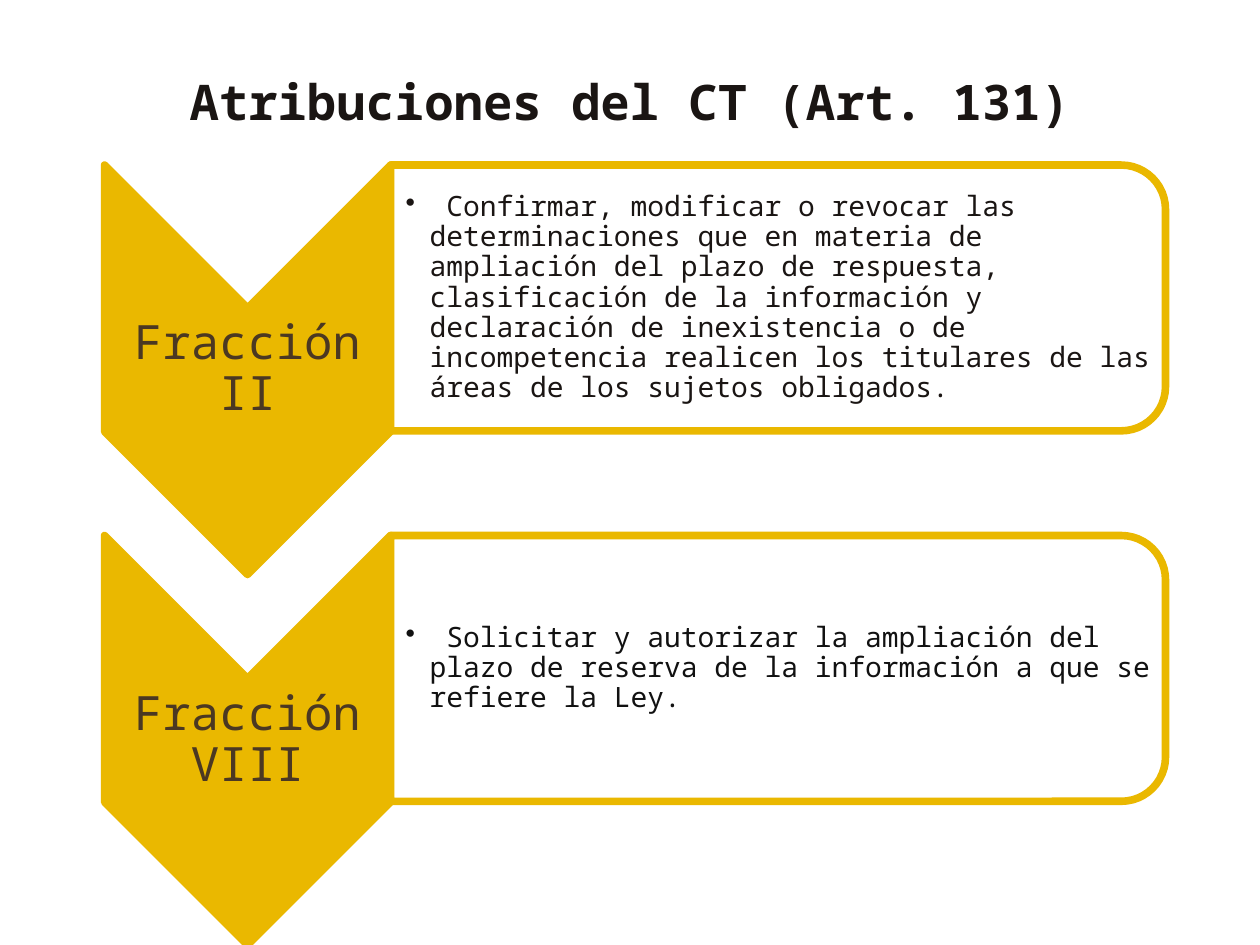
from lxml.etree import SubElement
from pptx import Presentation
from pptx.dml.color import RGBColor
from pptx.enum.shapes import MSO_SHAPE as Shape
from pptx.enum.text import MSO_ANCHOR as Anchor, PP_ALIGN as Align
from pptx.oxml.ns import qn
from pptx.util import Inches, Pt

COLORS = {"gold": "EAB800", "white": "FFFFFF", "title": "1A1513",
          "label": "4B3822", "bullet": "111111"}
FONT = "Noto Sans Mono"
LEFT, TOP, STEP = 0.83, 1.31, 2.94
CHEVRON_WIDTH, CHEVRON_HEIGHT = 2.27, 3.25
PANEL_WIDTH, PANEL_HEIGHT = 6.15, 2.11

# Label, body text and body colour of each row
FRACTIONS = [
    ("Fracción II",
     " Confirmar, modificar o revocar las determinaciones que en materia de "
     "ampliación del plazo de respuesta, clasificación de la información y "
     "declaración de inexistencia o de incompetencia realicen los titulares "
     "de las áreas de los sujetos obligados.", "title"),
    ("Fracción VIII",
     " Solicitar y autorizar la ampliación del plazo de reserva de la "
     "información a que se refiere la Ley.", "bullet"),
]


def color(name):
    return RGBColor.from_string(COLORS[name])


def add_text(page, text, left, top, width, height, *, size, ink, bold=False,
             align=Align.LEFT, anchor=Anchor.MIDDLE, spacing=None,
             insets=(0.1, 0.05, 0.1, 0.05), bullet=False):
    box = page.shapes.add_textbox(*map(Inches, (left, top, width, height)))
    frame = box.text_frame
    frame.word_wrap = True
    frame.vertical_anchor = anchor
    (frame.margin_left, frame.margin_top,
     frame.margin_right, frame.margin_bottom) = map(Inches, insets)
    para = frame.paragraphs[0]
    para.alignment = align
    if spacing:
        para.line_spacing = spacing
    if bullet:
        props = para._p.get_or_add_pPr()
        props.set("marL", str(Inches(0.19)))
        props.set("indent", str(Inches(-0.19)))
        SubElement(props, qn("a:buChar")).set("char", "•")
    span = para.add_run()
    span.text = text
    span.font.name, span.font.size, span.font.bold = FONT, Pt(size), bold
    span.font.color.rgb = color(ink)


def add_turned_shape(page, kind, left, top, width, height, fill):
    """Add a shape turned 90 degrees that covers the given box."""
    shape = page.shapes.add_shape(
        kind, Inches(left + (width - height) / 2),
        Inches(top + (height - width) / 2), Inches(height), Inches(width))
    shape.rotation = 90
    shape.shadow.inherit = False
    shape.fill.solid()
    shape.fill.fore_color.rgb = color(fill)
    shape.line.color.rgb = color("gold")
    shape.line.width = Pt(4.33)
    return shape


def add_chevron(page, label, left, top):
    add_turned_shape(page, Shape.CHEVRON, left, top,
                     CHEVRON_WIDTH, CHEVRON_HEIGHT, "gold")
    notch = CHEVRON_WIDTH / 2
    add_text(page, label, left, top + notch, CHEVRON_WIDTH,
             CHEVRON_HEIGHT - 2 * notch, size=27, ink="label",
             align=Align.CENTER, spacing=0.9, insets=(0.02,) * 4)


def add_panel(page, text, ink, left, top):
    panel = add_turned_shape(page, Shape.ROUND_2_SAME_RECTANGLE, left, top,
                             PANEL_WIDTH, PANEL_HEIGHT, "white")
    fill_color = panel._element.spPr.find(qn("a:solidFill"))[0]
    SubElement(fill_color, qn("a:alpha")).set("val", "90000")
    add_text(page, text, left, top + 0.1, PANEL_WIDTH - 0.1,
             PANEL_HEIGHT - 0.2, size=16, ink=ink, spacing=0.9,
             insets=(0.12, 0.01, 0.01, 0.01), bullet=True)


def add_fraction(page, label, text, ink, left, top):
    add_chevron(page, label, left, top)
    add_panel(page, text, ink, left + CHEVRON_WIDTH, top)


def main():
    deck = Presentation()
    deck.slide_width, deck.slide_height = Inches(10), Inches(7.5)
    page = deck.slides.add_slide(deck.slide_layouts[6])
    add_text(page, "Atribuciones del CT (Art. 131)", 0.75, 0.52, 8.5, 1.1,
             size=28, ink="title", bold=True, align=Align.CENTER,
             anchor=Anchor.TOP)
    for row, (label, text, ink) in enumerate(FRACTIONS):
        add_fraction(page, label, text, ink, LEFT, TOP + row * STEP)
    deck.save("out.pptx")


if __name__ == "__main__":
    main()
